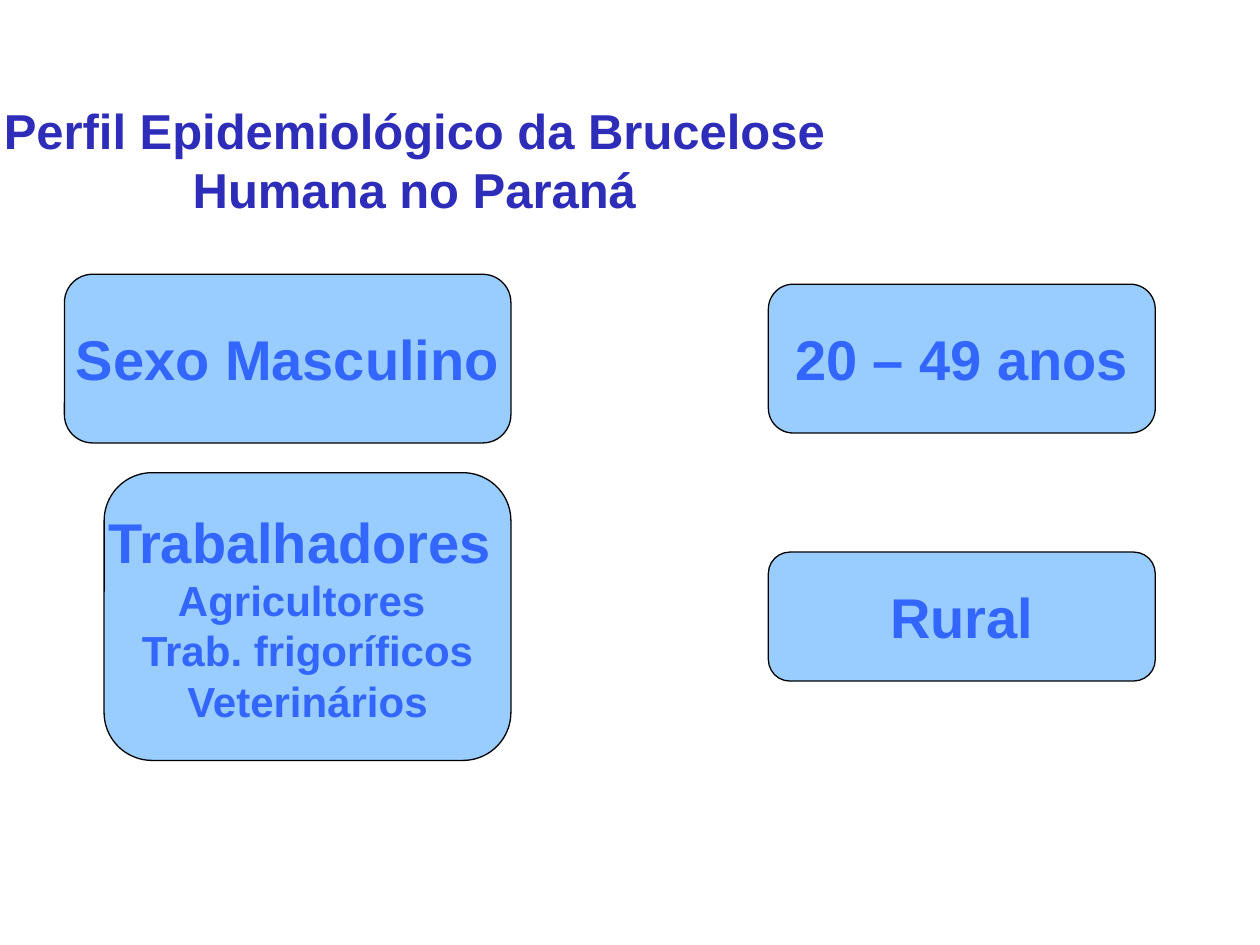
from pptx import Presentation
from pptx.dml.color import RGBColor
from pptx.enum.shapes import MSO_SHAPE
from pptx.enum.text import MSO_ANCHOR, PP_ALIGN
from pptx.util import Cm, Pt

ROUNDED = MSO_SHAPE.ROUNDED_RECTANGLE
MIDDLE = MSO_ANCHOR.MIDDLE
CENTER = PP_ALIGN.CENTER

COLORS = {"title": "2D2DB9", "text": "3366FF", "fill": "99CCFF", "line": "000000"}
FONT = "Arial"

LEFT_EDGE = 10.3
RIGHT_COLUMN, RIGHT_WIDTH = 15.49, 7.8

# (left, top, width, height) in cm, then (text, size) for each paragraph
PROFILE = [
    ((1.3, 5.53, LEFT_EDGE - 1.3, 3.4), [("Sexo Masculino", 32)]),
    ((2.1, 9.53, LEFT_EDGE - 2.1, 5.8),
     [("Trabalhadores ", 32), ("Agricultores ", 24),
      ("Trab. frigoríficos", 24), ("Veterinários", 24)]),
    ((RIGHT_COLUMN, 5.73, RIGHT_WIDTH, 3), [("20 – 49 anos", 32)]),
    ((RIGHT_COLUMN, 11.13, RIGHT_WIDTH, 2.6), [("Rural", 32)]),
]


def rgb(name):
    return RGBColor.from_string(COLORS[name])


def add_run(p, text, size, color):
    r = p.add_run()
    r.text = text
    r.font.name = FONT
    r.font.size = Pt(size)
    r.font.bold = True
    r.font.color.rgb = rgb(color)


def add_title(s, box, lines):
    tf = s.shapes.add_textbox(*map(Cm, box)).text_frame
    tf.word_wrap = True
    tf.vertical_anchor = MIDDLE
    p = tf.paragraphs[0]
    p.alignment = CENTER
    for i, line in enumerate(lines):
        if i:
            p.add_line_break()
        add_run(p, line, 28, "title")


def add_profile_box(s, box, paragraphs):
    sp = s.shapes.add_shape(ROUNDED, *map(Cm, box))
    sp.shadow.inherit = False
    sp.fill.solid()
    sp.fill.fore_color.rgb = rgb("fill")
    sp.line.color.rgb = rgb("line")
    sp.line.width = Pt(0.75)
    tf = sp.text_frame
    tf.word_wrap = False
    tf.vertical_anchor = MIDDLE
    for i, (text, size) in enumerate(paragraphs):
        p = tf.add_paragraph() if i else tf.paragraphs[0]
        p.alignment = CENTER
        add_run(p, text, size, "text")


def main():
    prs = Presentation()
    prs.slide_width, prs.slide_height = Cm(25.4), Cm(19.05)
    s = prs.slides.add_slide(prs.slide_layouts[6])
    for box, paragraphs in PROFILE:
        add_profile_box(s, box, paragraphs)
    add_title(s, (-0.71, 1.32, 18.4, 3.78),
              ["Perfil Epidemiológico da Brucelose ", "Humana no Paraná "])
    prs.save("out.pptx")


if __name__ == "__main__":
    main()
